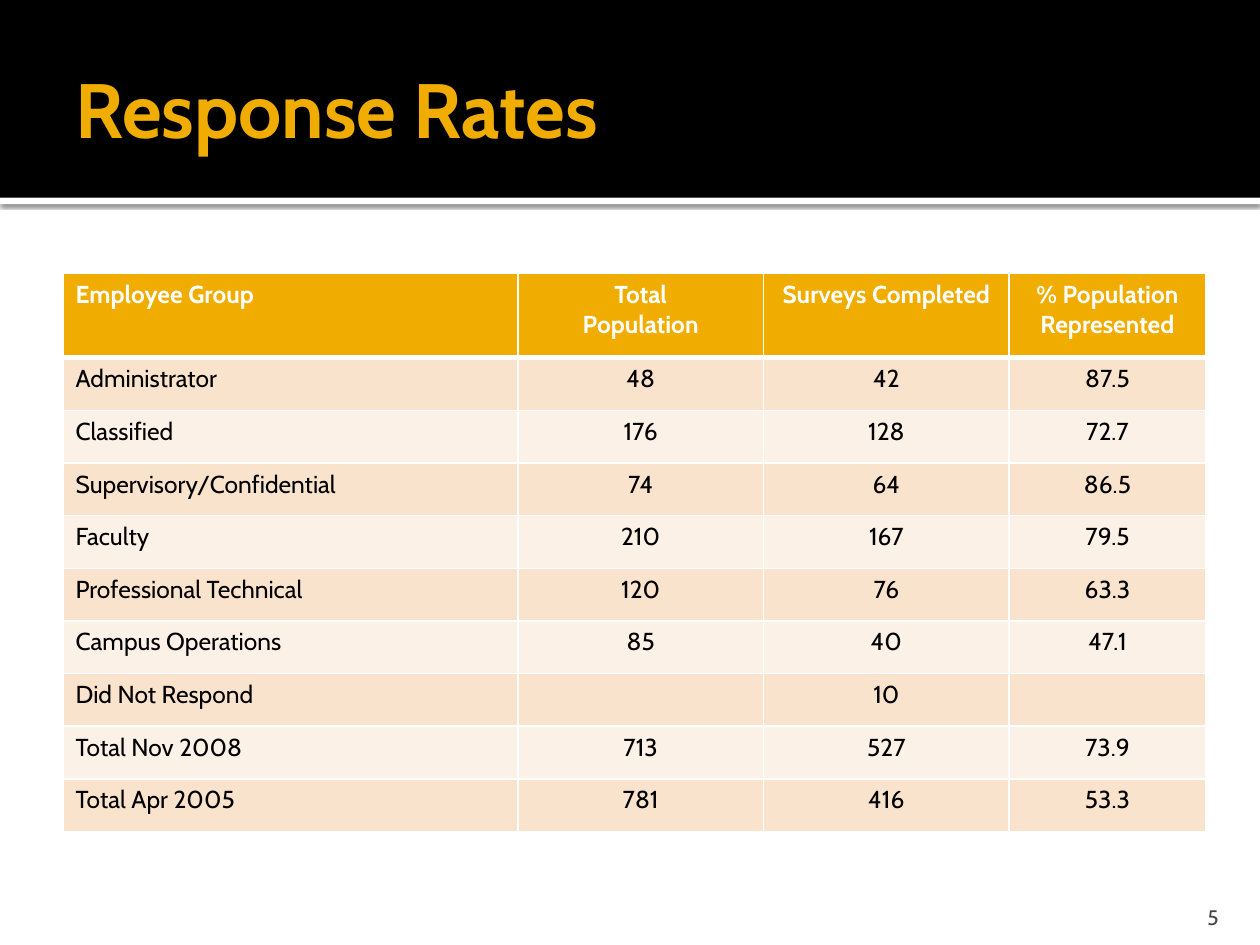
import pptx
import pptx.dml.color
import pptx.enum.shapes
import pptx.enum.text
import pptx.oxml
import pptx.oxml.ns
import pptx.util

Inches, Pt = pptx.util.Inches, pptx.util.Pt
RGBColor = pptx.dml.color.RGBColor
Align, Anchor = pptx.enum.text.PP_ALIGN, pptx.enum.text.MSO_ANCHOR

WHITE = RGBColor(0xFF, 0xFF, 0xFF)
BLACK = RGBColor(0x00, 0x00, 0x00)
GOLD = RGBColor(0xF0, 0xAD, 0x00)
DARK_BAND = RGBColor(0xF9, 0xE3, 0xCC)
LIGHT_BAND = RGBColor(0xFC, 0xF1, 0xE7)
GRAY = RGBColor(0x45, 0x45, 0x45)

COLUMN_WIDTHS = [3.61, 1.95, 1.95, 1.56]
HEADER_HEIGHT = 0.67
TABLE_HEIGHT = 4.43
ROWS = [
    ["Employee Group", "Total\nPopulation", "Surveys Completed", "% Population Represented"],
    ["Administrator", "48", "42", "87.5"],
    ["Classified", "176", "128", "72.7"],
    ["Supervisory/Confidential", "74", "64", "86.5"],
    ["Faculty", "210", "167", "79.5"],
    ["Professional Technical", "120", "76", "63.3"],
    ["Campus Operations", "85", "40", "47.1"],
    ["Did Not Respond", "", "10", ""],
    ["Total Nov 2008", "713", "527", "73.9"],
    ["Total Apr 2005", "781", "416", "53.3"],
]


def write(tf, text, size=14, color=BLACK, bold=False, align=Align.LEFT, font="Cabin"):
    """Fill a text frame, one paragraph for each line of text."""
    for i, line in enumerate(text.split("\n")):
        p = tf.paragraphs[0] if i == 0 else tf.add_paragraph()
        p.alignment = align
        r = p.add_run()
        r.text = line
        r.font.name, r.font.size, r.font.bold = font, Pt(size), bold
        r.font.color.rgb = color


def set_borders(cell, color=WHITE, bottom=1):
    """Outline a cell with 1 pt lines; the bottom line may be heavier."""
    tcPr = cell._tc.get_or_add_tcPr()
    widths = {"lnL": 1, "lnR": 1, "lnT": 1, "lnB": bottom}
    for i, (side, width) in enumerate(widths.items()):
        tcPr.insert(i, pptx.oxml.parse_xml(
            f'<a:{side} {pptx.oxml.ns.nsdecls("a")} w="{Pt(width)}">'
            f'<a:solidFill><a:srgbClr val="{color}"/></a:solidFill></a:{side}>'))


class SlideBuilder:
    def __init__(self, prs):
        self.s = prs.slides.add_slide(prs.slide_layouts[6])

    def band(self, top, height, color, shadow=False):
        """Draw a full-width bar."""
        sp = self.s.shapes.add_shape(
            pptx.enum.shapes.MSO_SHAPE.RECTANGLE,
            0, Inches(top), Inches(10), Inches(height))
        sp.shadow.inherit = False
        sp.fill.solid()
        sp.fill.fore_color.rgb = color
        sp.line.fill.background()
        if shadow:
            effects = sp._element.spPr.find(pptx.oxml.ns.qn("a:effectLst"))
            effects.append(pptx.oxml.parse_xml(
                f'<a:outerShdw {pptx.oxml.ns.nsdecls("a")} blurRad="{Pt(2.5)}" '
                f'dist="{Pt(0.8)}" dir="5400000" algn="tl" rotWithShape="0">'
                '<a:srgbClr val="000000"><a:alpha val="60000"/></a:srgbClr>'
                '</a:outerShdw>'))

    def text(self, box, text, anchor, insets, **style):
        tf = self.s.shapes.add_textbox(*map(Inches, box)).text_frame
        tf.word_wrap = True
        tf.vertical_anchor = anchor
        (tf.margin_left, tf.margin_top,
         tf.margin_right, tf.margin_bottom) = map(Inches, insets)
        write(tf, text, **style)

    def table(self, left, top, rows):
        table = self.s.shapes.add_table(
            len(rows), len(COLUMN_WIDTHS), Inches(left), Inches(top),
            Inches(sum(COLUMN_WIDTHS)), Inches(TABLE_HEIGHT)).table
        for column, width in zip(table.columns, COLUMN_WIDTHS):
            column.width = Inches(width)
        body_height = (TABLE_HEIGHT - HEADER_HEIGHT) / (len(rows) - 1)
        for i, values in enumerate(rows):
            header = i == 0
            table.rows[i].height = Inches(HEADER_HEIGHT if header else body_height)
            for j, value in enumerate(values):
                cell = table.cell(i, j)
                cell.fill.solid()
                cell.fill.fore_color.rgb = (
                    GOLD if header else DARK_BAND if i % 2 else LIGHT_BAND)
                set_borders(cell, bottom=3 if header else 1)
                if i == 1:
                    cell._tc.tcPr.find(pptx.oxml.ns.qn("a:lnT")).set("w", str(Pt(3)))
                if value:
                    write(cell.text_frame, value, bold=header,
                          color=WHITE if header else BLACK,
                          align=Align.CENTER if j else Align.LEFT)


def main():
    prs = pptx.Presentation()
    prs.slide_width, prs.slide_height = Inches(10), Inches(7.5)
    slide = SlideBuilder(prs)
    slide.band(1.57, 0.05, WHITE, shadow=True)
    slide.band(0, 1.57, BLACK)
    slide.text((0.5, 0.17, 9, 1.37), "Response Rates", Anchor.MIDDLE,
               (0.1, 0.05, 0.05, 0.05), size=44, color=GOLD, bold=True)
    slide.table(0.5, 2.17, ROWS)
    slide.text((8.97, 7.08, 0.8, 0.3), "5", Anchor.BOTTOM,
               (0.1, 0.05, 0.1, 0), size=12, color=GRAY, align=Align.RIGHT)
    prs.save("out.pptx")


if __name__ == "__main__":
    main()
